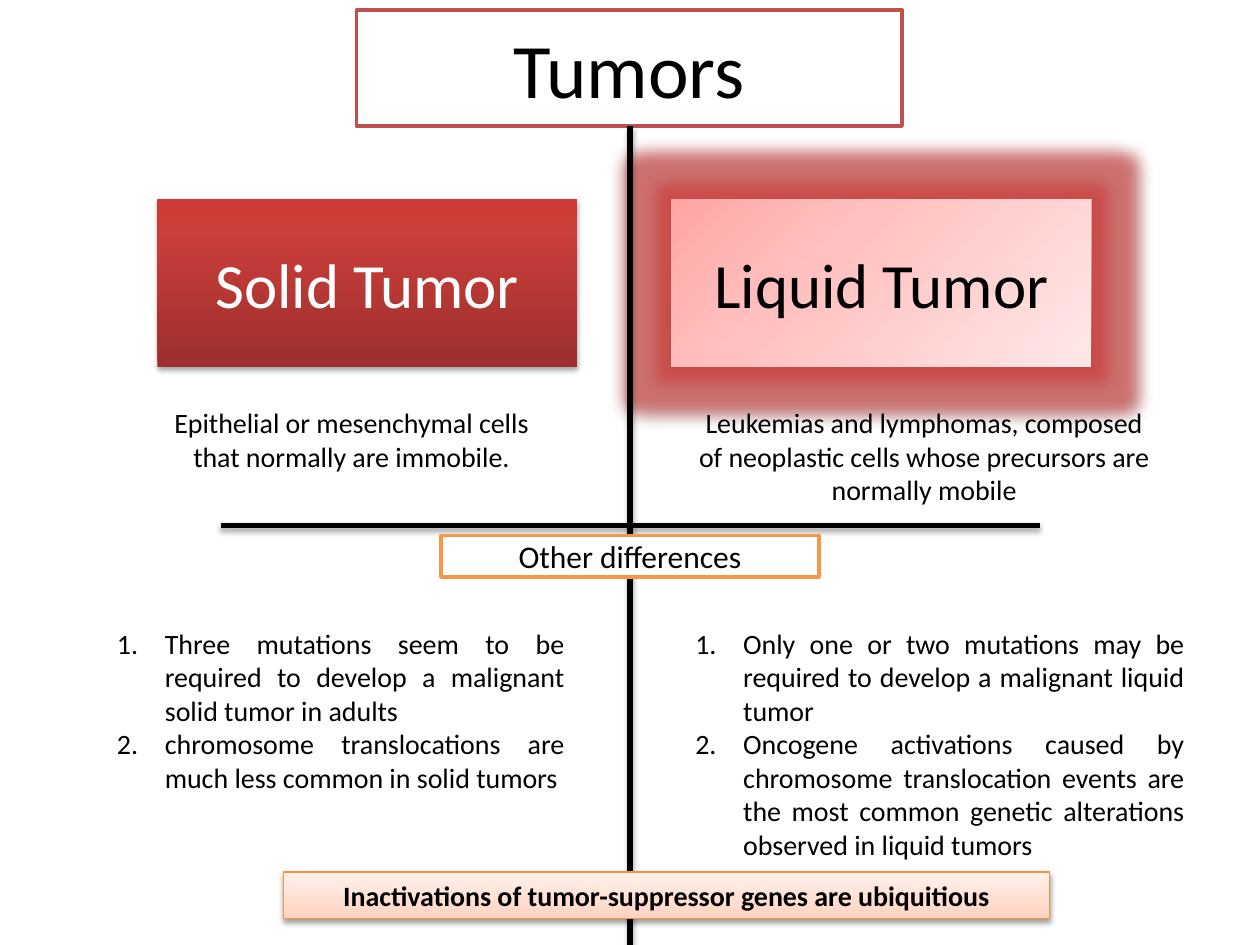
import pptx
import pptx.util
import pptx.dml.color
import pptx.enum.shapes
import pptx.enum.text
import pptx.oxml
import pptx.oxml.ns

Inches = pptx.util.Inches
Pt = pptx.util.Pt
ALIGN = pptx.enum.text.PP_ALIGN
ANCHOR = pptx.enum.text.MSO_ANCHOR
NS = pptx.oxml.ns.nsdecls("a")
BLACK, WHITE = "000000", "FFFFFF"


def rgb(value):
    """Turn a hex string into a colour."""
    return pptx.dml.color.RGBColor.from_string(value)


def element(xml):
    """Parse a DrawingML fragment whose root tag takes the namespace."""
    head, rest = xml.split(">", 1)
    close = "/" if head.endswith("/") else ""
    return pptx.oxml.parse_xml(f"{head.rstrip('/')} {NS}{close}>{rest}")


def add_shadow(effects, alpha, dist):
    """Add a soft shadow that falls straight down."""
    effects.append(element(
        f'<a:outerShdw blurRad="{Pt(3.1)}" dist="{Pt(dist)}" dir="5400000" rotWithShape="0">'
        f'<a:srgbClr val="{BLACK}"><a:alpha val="{alpha * 1000}"/></a:srgbClr></a:outerShdw>'))


def add_glow(effects, color, alpha, radius):
    """Add a coloured glow."""
    effects.append(element(
        f'<a:glow rad="{Pt(radius)}"><a:srgbClr val="{color}">'
        f'<a:alpha val="{alpha * 1000}"/></a:srgbClr></a:glow>'))


def fill_gradient(sp, stops, radial=False):
    """Fill a shape with colour stops, upward or from the top left corner."""
    sp.fill.gradient()
    grad = sp._element.spPr.find(pptx.oxml.ns.qn("a:gradFill"))
    for child in list(grad):
        grad.remove(child)
    grad.append(element("<a:gsLst>" + "".join(
        f'<a:gs pos="{pos * 1000}"><a:srgbClr val="{color}"/></a:gs>'
        for pos, color in stops) + "</a:gsLst>"))
    if radial:
        grad.append(element('<a:path path="circle">'
                            '<a:fillToRect r="100000" b="100000"/></a:path>'))
    else:
        grad.append(element('<a:lin ang="16200000" scaled="0"/>'))


def format_paragraph(p, size, color=BLACK, bold=False, align=ALIGN.CENTER):
    """Set the alignment and font of a paragraph."""
    p.alignment = align
    for r in p.runs:
        r.font.name = "Calibri"
        r.font.size = Pt(size)
        r.font.bold = bold
        r.font.color.rgb = rgb(color)


def add_box(s, box, text, size, color=BLACK, bold=False, line=None, width=2,
            stops=None, radial=False, shadow=None, glow=None):
    """Add a labelled rectangle."""
    sp = s.shapes.add_shape(pptx.enum.shapes.MSO_SHAPE.RECTANGLE,
                            *[Inches(v) for v in box])
    sp.shadow.inherit = False
    if stops:
        fill_gradient(sp, stops, radial)
    else:
        sp.fill.solid()
        sp.fill.fore_color.rgb = rgb(WHITE)
    if line:
        sp.line.color.rgb = rgb(line)
        sp.line.width = Pt(width)
    else:
        sp.line.fill.background()
    effects = sp._element.spPr.find(pptx.oxml.ns.qn("a:effectLst"))
    if glow:
        add_glow(effects, *glow)
    if shadow:
        add_shadow(effects, *shadow)
    tf = sp.text_frame
    tf.word_wrap = True
    tf.vertical_anchor = ANCHOR.MIDDLE
    tf.text = text
    format_paragraph(tf.paragraphs[0], size, color, bold)


def add_text(s, box, lines, numbered=False):
    """Add a text box, centred or as a justified numbered list."""
    tf = s.shapes.add_textbox(*[Inches(v) for v in box]).text_frame
    tf.word_wrap = True
    tf.auto_size = pptx.enum.text.MSO_AUTO_SIZE.SHAPE_TO_FIT_TEXT
    tf.text = "\n".join(lines)
    for p in tf.paragraphs:
        format_paragraph(p, 16, align=ALIGN.JUSTIFY if numbered else ALIGN.CENTER)
        if numbered:
            pPr = p._p.get_or_add_pPr()
            pPr.set("marL", str(Inches(0.38)))
            pPr.set("indent", str(-Inches(0.38)))
            pPr.append(element('<a:buFont typeface="+mj-lt"/>'))
            pPr.append(element('<a:buAutoNum type="arabicPeriod"/>'))


def add_line(s, x1, y1, x2, y2):
    """Add a thick black divider with a shadow."""
    c = s.shapes.add_connector(pptx.enum.shapes.MSO_CONNECTOR.STRAIGHT,
                               *[Inches(v) for v in (x1, y1, x2, y2)])
    c.line.color.rgb = rgb(BLACK)
    c.line.width = Pt(3)
    effects = element("<a:effectLst/>")
    add_shadow(effects, 35, 1.8)
    c._element.spPr.append(effects)


def main():
    """Build the slide that compares solid and liquid tumors."""
    prs = pptx.Presentation()
    prs.slide_width, prs.slide_height = Inches(10), Inches(7.5)
    s = prs.slides.add_slide(prs.slide_layouts[6])

    add_box(s, (2.83, 0.08, 4.33, 0.92), "Tumors", 44, line="C0504D")
    add_box(s, (1.25, 1.58, 3.33, 1.33), "Solid Tumor", 36, WHITE,
            stops=[(0, "9C2F2D"), (80, "CB3E3A"), (100, "CE3B37")], shadow=(35, 1.8))
    add_box(s, (5.33, 1.58, 3.33, 1.33), "Liquid Tumor", 36, radial=True,
            stops=[(0, "FFA6A5"), (35, "FFC0BF"), (100, "FFE7E7")],
            shadow=(38, 1.6), glow=("D13B38", 60, 18))

    add_text(s, (5.42, 3.17, 3.83, 0.91),
             ["Leukemias and lymphomas, composed of neoplastic cells whose "
              "precursors are normally mobile"])
    add_text(s, (1.08, 3.17, 3.42, 0.64),
             ["Epithelial or mesenchymal cells that normally are immobile."])

    add_line(s, 5, 1, 5, 7.5)
    add_line(s, 8.25, 4.17, 1.75, 4.17)
    add_box(s, (3.5, 4.25, 3, 0.33), "Other differences", 18, line="F79646")

    add_text(s, (0.83, 4.92, 3.75, 1.45),
             ["Three mutations seem to be required to develop a malignant solid "
              "tumor in adults",
              "chromosome translocations are much less common in solid tumors"],
             numbered=True)
    add_text(s, (5.42, 4.92, 4.08, 2.26),
             ["Only one or two mutations may be required to develop a malignant "
              "liquid tumor",
              "Oncogene activations caused by chromosome translocation events are "
              "the most common genetic alterations observed in liquid tumors"],
             numbered=True)

    add_box(s, (2.25, 6.92, 6.08, 0.37),
            "Inactivations of tumor-suppressor genes are ubiquitious", 16, bold=True,
            line="F69240", width=0.75, shadow=(38, 1.6),
            stops=[(0, "FFD2BD"), (35, "FFDED0"), (100, "FFF2ED")])
    prs.save("out.pptx")


if __name__ == "__main__":
    main()
